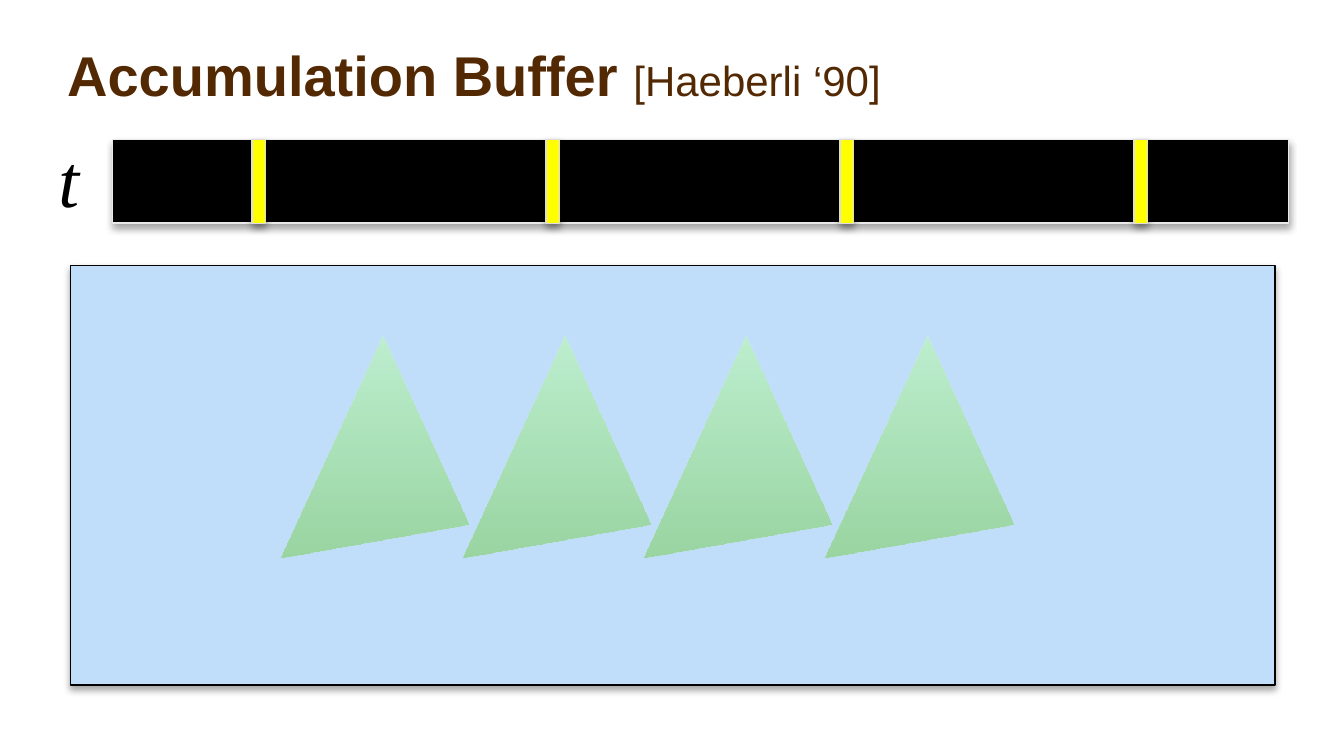
import pptx
import pptx.dml.color
import pptx.enum.shapes
import pptx.enum.text
import pptx.oxml
import pptx.oxml.ns
import pptx.util
from lxml import etree

Inches = pptx.util.Inches
Pt = pptx.util.Pt

COLORS = {
    "black": "000000",
    "title": "532903",
    "frame": "C0DDFA",
    "sample": "FFFF00",
    "timeline_edge": "EAEAEA",
    "sample_edge": "DDDDDD",
    "triangle_bottom": "73CC48",
    "triangle_top": "BBFFA6",
}
SAMPLE_COUNT = 4


def rgb(name):
    return pptx.dml.color.RGBColor.from_string(COLORS[name])


def add_alpha(color_element, percent):
    alpha = etree.SubElement(color_element, pptx.oxml.ns.qn("a:alpha"))
    alpha.set("val", str(percent * 1000))


def add_shadow(shape):
    qn = pptx.oxml.ns.qn
    shape.shadow.inherit = False
    effects = shape._element.spPr.find(qn("a:effectLst"))
    shadow = etree.SubElement(effects, qn("a:outerShdw"))
    shadow.set("blurRad", str(int(Pt(3.1))))
    shadow.set("dist", str(int(Pt(1.8))))
    shadow.set("dir", "5400000")
    shadow.set("rotWithShape", "0")
    color = etree.SubElement(shadow, qn("a:srgbClr"))
    color.set("val", COLORS["black"])
    add_alpha(color, 35)


def add_rectangle(page, left, top, width, height, fill, edge, edge_width):
    shape = page.shapes.add_shape(
        pptx.enum.shapes.MSO_SHAPE.RECTANGLE,
        Inches(left), Inches(top), Inches(width), Inches(height))
    shape.fill.solid()
    shape.fill.fore_color.rgb = rgb(fill)
    shape.line.color.rgb = rgb(edge)
    shape.line.width = Pt(edge_width)
    add_shadow(shape)


def add_triangle(page, left, top):
    builder = page.shapes.build_freeform(Inches(left), Inches(top + 1.32), scale=1.0)
    corners = [(left + 0.61, top), (left + 1.12, top + 1.12)]
    builder.add_line_segments([(Inches(x), Inches(y)) for x, y in corners], close=True)
    triangle = builder.convert_to_shape()
    triangle.fill.gradient()
    triangle.fill.gradient_angle = 90
    stops = zip(triangle.fill.gradient_stops,
                [(0, "triangle_bottom", 50), (1, "triangle_top", 51)])
    for stop, (position, color, opacity) in stops:
        stop.position = position
        stop.color.rgb = rgb(color)
    fill = triangle._element.spPr.find(pptx.oxml.ns.qn("a:gradFill"))
    for element, opacity in zip(fill.iter(pptx.oxml.ns.qn("a:srgbClr")), (50, 51)):
        add_alpha(element, opacity)
    triangle.line.fill.background()
    triangle.shadow.inherit = False


def add_text(page, left, top, width, height, margins, wrap):
    box = page.shapes.add_textbox(
        Inches(left), Inches(top), Inches(width), Inches(height))
    frame = box.text_frame
    frame.word_wrap = wrap
    frame.auto_size = pptx.enum.text.MSO_AUTO_SIZE.SHAPE_TO_FIT_TEXT
    side, above, below = margins
    frame.margin_left = frame.margin_right = Inches(side)
    frame.margin_top = Inches(above)
    frame.margin_bottom = Inches(below)
    return frame.paragraphs[0]


def add_span(para, text, size, font, color, bold=False, italic=False):
    span = para.add_run()
    span.text = text
    span.font.size = Pt(size)
    span.font.name = font
    span.font.color.rgb = rgb(color)
    span.font.bold = bold
    span.font.italic = italic


def main():
    deck = pptx.Presentation()
    deck.slide_width = Inches(8)
    deck.slide_height = Inches(4.5)
    page = deck.slides.add_slide(deck.slide_layouts[6])

    add_rectangle(page, 0.67, 0.83, 7, 0.5, "black", "timeline_edge", 0.75)
    label = add_text(page, 0.25, 0.71, 0.33, 0.64, (0.1, 0.08, 0.05), False)
    add_span(label, "t", 32, "Times New Roman", "black", italic=True)

    title = add_text(page, 0.32, 0.17, 6.94, 0.48, (0.08, 0.07, 0.02), True)
    add_span(title, "Accumulation Buffer ", 24, "Arial", "title", bold=True)
    add_span(title, "[Haeberli ‘90]", 18, "Arial", "title")

    add_rectangle(page, 0.42, 1.58, 7.17, 2.5, "frame", "black", 0.75)
    for index in range(SAMPLE_COUNT):
        add_triangle(page, 1.67 + 1.08 * index, 2)
    for index in range(SAMPLE_COUNT):
        add_rectangle(page, 1.5 + 1.75 * index, 0.83, 0.08, 0.5,
                      "sample", "sample_edge", 0.5)

    deck.save("out.pptx")


if __name__ == "__main__":
    main()
